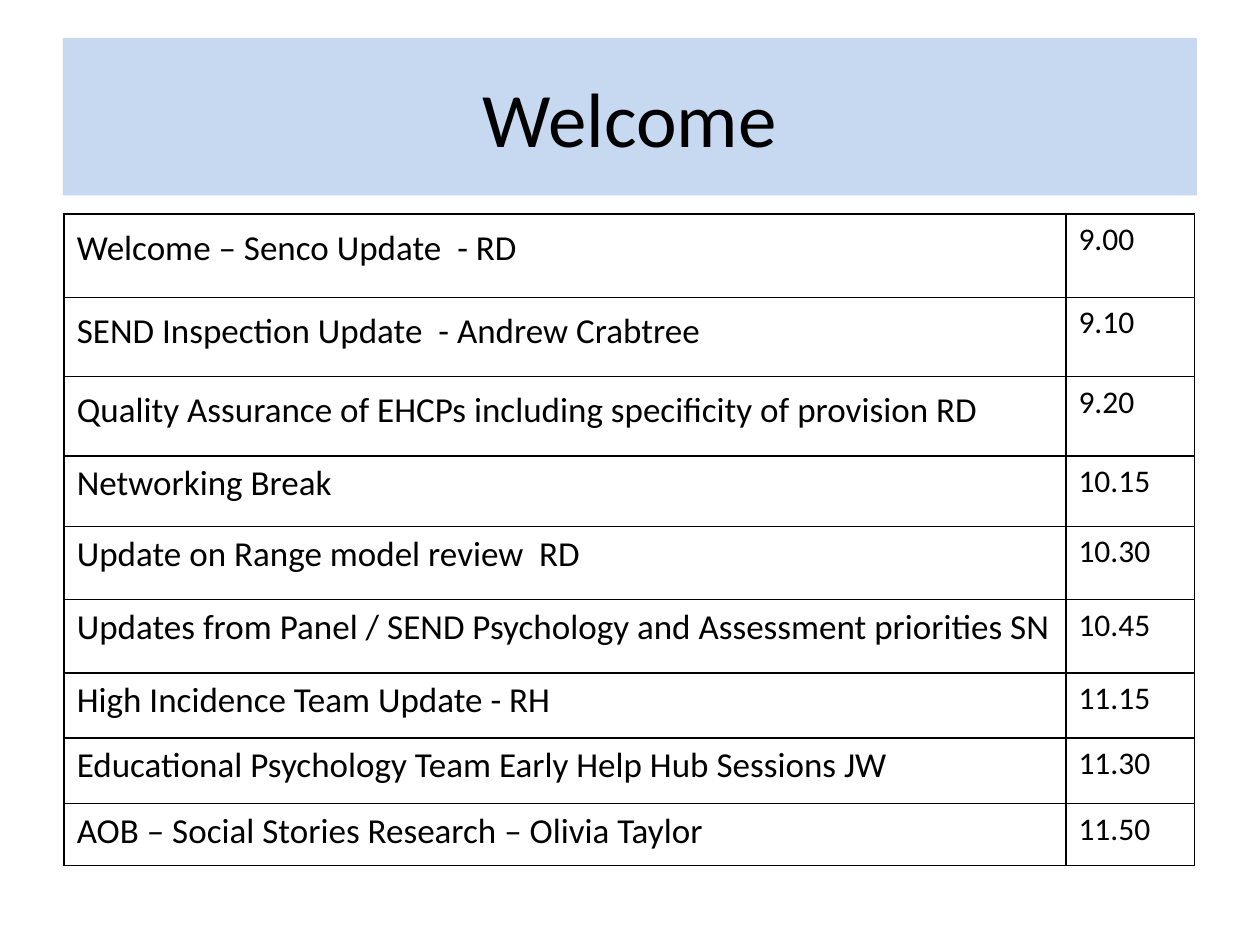
from lxml import etree
from pptx import Presentation
from pptx.dml.color import RGBColor
from pptx.enum import shapes, text
from pptx.oxml import ns
from pptx.util import Inches, Pt

BLACK = RGBColor(0x00, 0x00, 0x00)
PALE_BLUE = RGBColor(0xC6, 0xD9, 0xF1)
FONT = "Calibri"

# Item, start time, row height in inches, line spacing
AGENDA = [
    ("Welcome – Senco Update  - RD", "9.00", 0.66, 1.15),
    ("SEND Inspection Update  - Andrew Crabtree", "9.10", 0.63, 1.15),
    ("Quality Assurance of EHCPs including specificity of provision RD", "9.20", 0.63, 1.15),
    ("Networking Break", "10.15", 0.56, None),
    ("Update on Range model review  RD", "10.30", 0.58, None),
    ("Updates from Panel / SEND Psychology and Assessment priorities SN", "10.45", 0.58, None),
    ("High Incidence Team Update - RH", "11.15", 0.52, None),
    ("Educational Psychology Team Early Help Hub Sessions JW", "11.30", 0.52, None),
    ("AOB – Social Stories Research – Olivia Taylor", "11.50", 0.49, None),
]
COLUMNS = (7.95, 1.02)


def add_run(p, wording, size):
    r = p.add_run()
    r.text = wording
    r.font.name = FONT
    r.font.size = Pt(size)
    r.font.color.rgb = BLACK


def set_borders(cell):
    tcPr = cell._tc.get_or_add_tcPr()
    for i, side in enumerate(("lnL", "lnR", "lnT", "lnB")):
        ln = etree.Element(ns.qn(f"a:{side}"), w=str(Pt(1)))
        fill = etree.SubElement(ln, ns.qn("a:solidFill"))
        etree.SubElement(fill, ns.qn("a:srgbClr"), val=str(BLACK))
        tcPr.insert(i, ln)


def add_title(s, x, y, w, h):
    sp = s.shapes.add_shape(shapes.MSO_SHAPE.RECTANGLE, x, y, w, h)
    sp.shadow.inherit = False
    sp.fill.solid()
    sp.fill.fore_color.rgb = PALE_BLUE
    sp.line.fill.background()
    tf = sp.text_frame
    tf.word_wrap = True
    tf.vertical_anchor = text.MSO_ANCHOR.MIDDLE
    p = tf.paragraphs[0]
    p.alignment = text.PP_ALIGN.CENTER
    add_run(p, "Welcome", 44)


def add_agenda(s, x, y, w, h):
    table = s.shapes.add_table(len(AGENDA), len(COLUMNS), x, y, w, h).table
    table.first_row = table.horz_banding = False
    for column, width in zip(table.columns, COLUMNS):
        column.width = Inches(width)
    for row, (item, start, height, spacing) in zip(table.rows, AGENDA):
        row.height = Inches(height)
        for cell, wording, size in zip(row.cells, (item, start), (20, 18)):
            cell.fill.background()
            set_borders(cell)
            add_run(cell.text_frame.paragraphs[0], wording, size)
        if spacing:
            row.cells[0].text_frame.paragraphs[0].line_spacing = spacing


def main():
    prs = Presentation()
    prs.slide_width, prs.slide_height = Inches(10), Inches(7.5)
    s = prs.slides.add_slide(prs.slide_layouts[6])
    # Title band
    add_title(s, Inches(0.5), Inches(0.3), Inches(9), Inches(1.25))
    # Agenda with start times
    add_agenda(s, Inches(0.51), Inches(1.7), Inches(8.98), Inches(5.15))
    prs.save("out.pptx")


if __name__ == "__main__":
    main()
